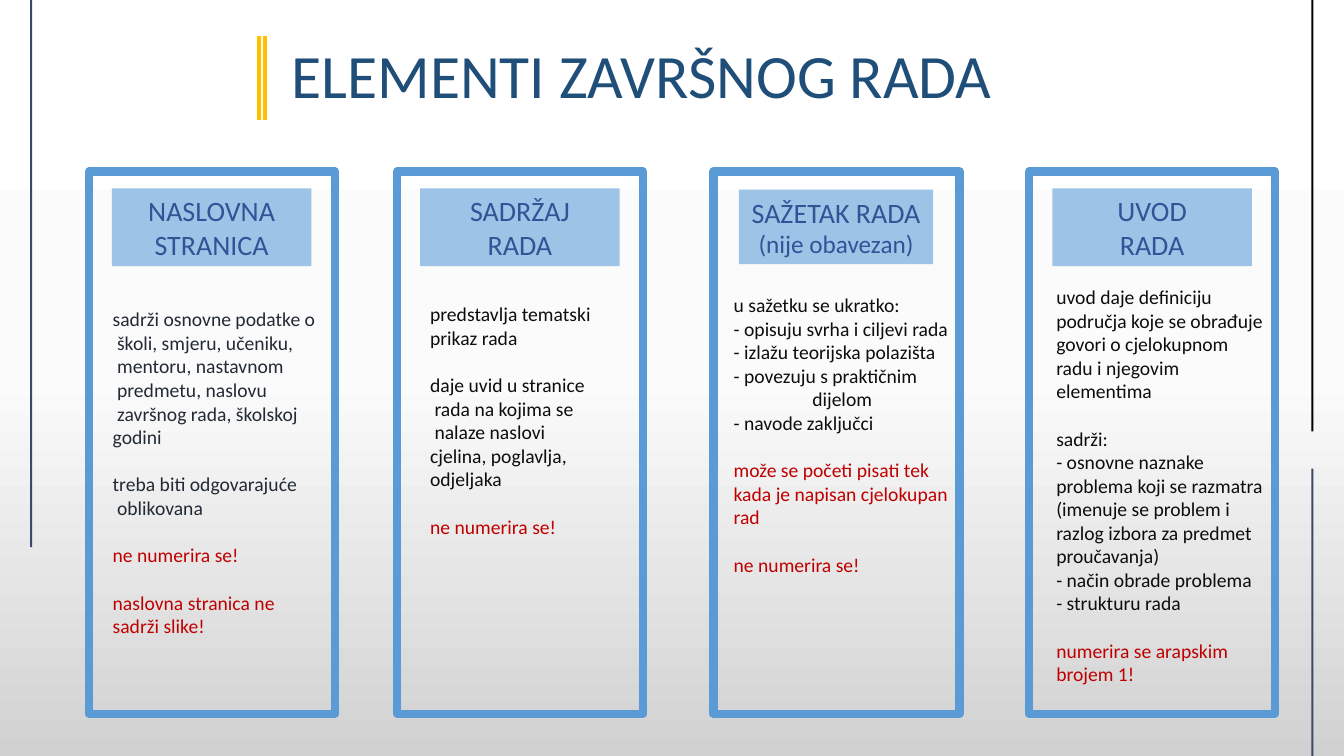
"""Builds a slide on the four opening parts of a final paper."""
import copy

import pptx
import pptx.dml.color
import pptx.enum.shapes
import pptx.enum.text
import pptx.oxml.ns
import pptx.util

Cm, Pt = pptx.util.Cm, pptx.util.Pt
PP_ALIGN, MSO_ANCHOR = pptx.enum.text.PP_ALIGN, pptx.enum.text.MSO_ANCHOR
COLORS = {
    "title": "1F4E79", "frame": "5B9BD5", "head_fill": "9DC3E6", "head": "2F5597",
    "slate": "222A35", "ink": "0D0D0D", "red": "C00000",
    "navy": "3C4868", "black": "000000", "gold": "FFC000",
    "bg_top": "FFFFFF", "bg_mid": "FBFBFB", "bg_end": "D1D1D1",
}


def rgb(name):
    return pptx.dml.color.RGBColor.from_string(COLORS[name])


def add_rect(s, left, top, width, height, fill=None):
    sp = s.shapes.add_shape(pptx.enum.shapes.MSO_SHAPE.RECTANGLE,
                            Cm(left), Cm(top), Cm(width), Cm(height))
    sp.shadow.inherit = False
    sp.line.fill.background()
    if fill:
        sp.fill.solid()
        sp.fill.fore_color.rgb = rgb(fill)
    else:
        sp.fill.background()
    return sp


prs = pptx.Presentation()
prs.slide_width, prs.slide_height = Cm(33.87), Cm(19.05)
s = prs.slides.add_slide(prs.slide_layouts[5])

bg = s.background.fill
bg.gradient()
bg.gradient_angle = 270
gs_list = s._element.find(".//" + pptx.oxml.ns.qn("a:gsLst"))
gs_list.insert(1, copy.deepcopy(gs_list[0]))
for stop, position, color in zip(bg.gradient_stops, (0, 0.5, 1), ("bg_top", "bg_mid", "bg_end")):
    stop.position = position
    stop.color.rgb = rgb(color)

title = s.shapes.title
title.left, title.top, title.width, title.height = Cm(7.09), Cm(0.79), Cm(18.6), Cm(2.13)
tf = title.text_frame
tf.word_wrap = False
tf.auto_size = pptx.enum.text.MSO_AUTO_SIZE.NONE
tf.vertical_anchor = MSO_ANCHOR.MIDDLE
p = tf.paragraphs[0]
p.alignment = PP_ALIGN.LEFT
r = p.add_run()
r.text = "ELEMENTI ZAVRŠNOG RADA"
r.font.size, r.font.name = Pt(44), "Calibri"
r.font.color.rgb = rgb("title")

bars = [
    (0.76, 0, 0.05, 13.79, "navy"),
    (33.05, 0, 0.05, 10.87, "black"),
    (33.05, 11.81, 0.05, 7.24, "navy"),
    (6.63, 0.91, 0.1, 2.11, "gold"),
    (6.48, 0.91, 0.1, 2.11, "gold"),
]
for bar in bars:
    add_rect(s, *bar)

GAP = 17
columns = [
    {"frame": 2.24, "head": (2.82, 4.75, 5.03, 1.96), "body": (2.59, 7.62, 5.66, 8.5),
     "titles": [("NASLOVNA", 20), ("STRANICA", 20)], "color": "slate",
     "paragraphs": [
         ("sadrži osnovne podatke o\n školi, smjeru, učeniku,\n mentoru, nastavnom\n"
          " predmetu, naslovu\n završnog rada, školskoj\ngodini", 0, False),
         ("treba biti odgovarajuće\n oblikovana", GAP, False),
         ("ne numerira se!", GAP, True),
         ("naslovna stranica ne sadrži slike!", GAP, True)]},
    {"frame": 10.01, "head": (10.59, 4.75, 5.03, 1.96), "body": (10.59, 7.49, 5.03, 6.76),
     "titles": [("SADRŽAJ", 20), ("RADA", 20)], "color": "ink",
     "paragraphs": [
         ("predstavlja tematski\nprikaz rada", 0, False),
         ("daje uvid u stranice\n rada na kojima se\n nalaze naslovi\n"
          "cjelina, poglavlja, odjeljaka", GAP, False),
         ("ne numerira se!", GAP, True)]},
    {"frame": 17.98, "head": (18.62, 4.78, 4.9, 1.88), "body": (18.24, 7.26, 5.97, 7.96),
     "titles": [("SAŽETAK RADA", 20), ("(nije obavezan)", 18)], "color": "ink",
     "paragraphs": [
         ("u sažetku se ukratko:", 0, False),
         ("- opisuju svrha i ciljevi rada", 0, False),
         ("- izlažu teorijska polazišta", 0, False),
         ("- povezuju s praktičnim", 0, False),
         ("dijelom", 0, False),
         ("- navode zaključci", 0, False),
         ("može se početi pisati tek kada je napisan cjelokupan rad", GAP, True),
         ("ne numerira se!", GAP, True)]},
    {"frame": 25.93, "head": (26.52, 4.75, 5.03, 1.96), "body": (26.37, 7.06, 5.77, 10.44),
     "titles": [("UVOD", 20), ("RADA", 20)], "color": "ink",
     "paragraphs": [
         ("uvod daje definiciju područja koje se obrađuje govori o cjelokupnom "
          "radu i njegovim elementima", 0, False),
         ("sadrži:", GAP, False),
         ("- osnovne naznake problema koji se razmatra (imenuje se problem i "
          "razlog izbora za predmet proučavanja)", 0, False),
         ("- način obrade problema", 0, False),
         ("- strukturu rada", 0, False),
         ("numerira se arapskim brojem 1!", GAP, True)]},
]

for column in columns:
    frame = add_rect(s, column["frame"], 4.32, 6.2, 13.67)
    frame.line.color.rgb = rgb("frame")
    frame.line.width = Pt(6)

    tf = add_rect(s, *column["head"], "head_fill").text_frame
    tf.word_wrap = True
    tf.vertical_anchor = MSO_ANCHOR.MIDDLE
    for i, (text, size) in enumerate(column["titles"]):
        p = tf.add_paragraph() if i else tf.paragraphs[0]
        p.alignment = PP_ALIGN.CENTER
        r = p.add_run()
        r.text = text
        r.font.size, r.font.name = Pt(size), "Calibri"
        r.font.color.rgb = rgb("head")

    tf = s.shapes.add_textbox(*map(Cm, column["body"])).text_frame
    tf.word_wrap = True
    for i, (text, gap, warning) in enumerate(column["paragraphs"]):
        p = tf.add_paragraph() if i else tf.paragraphs[0]
        p.space_before = Pt(gap)
        p.alignment = PP_ALIGN.CENTER if text == "dijelom" else PP_ALIGN.LEFT
        for j, line in enumerate(text.split("\n")):
            if j:
                p.add_line_break()
            r = p.add_run()
            r.text = line
            r.font.size, r.font.name = Pt(14), "Calibri"
            r.font.color.rgb = rgb("red" if warning else column["color"])

prs.save("out.pptx")
